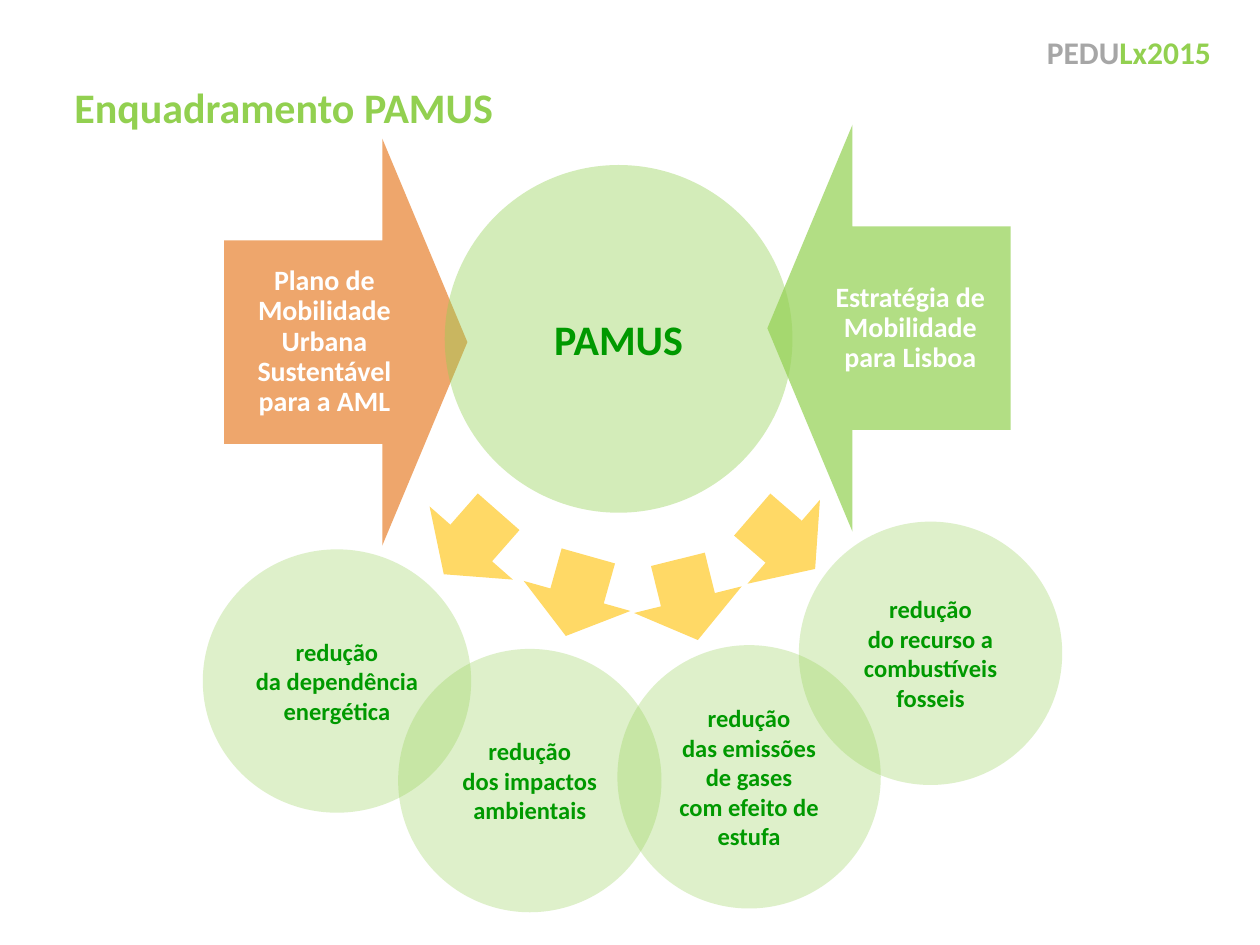
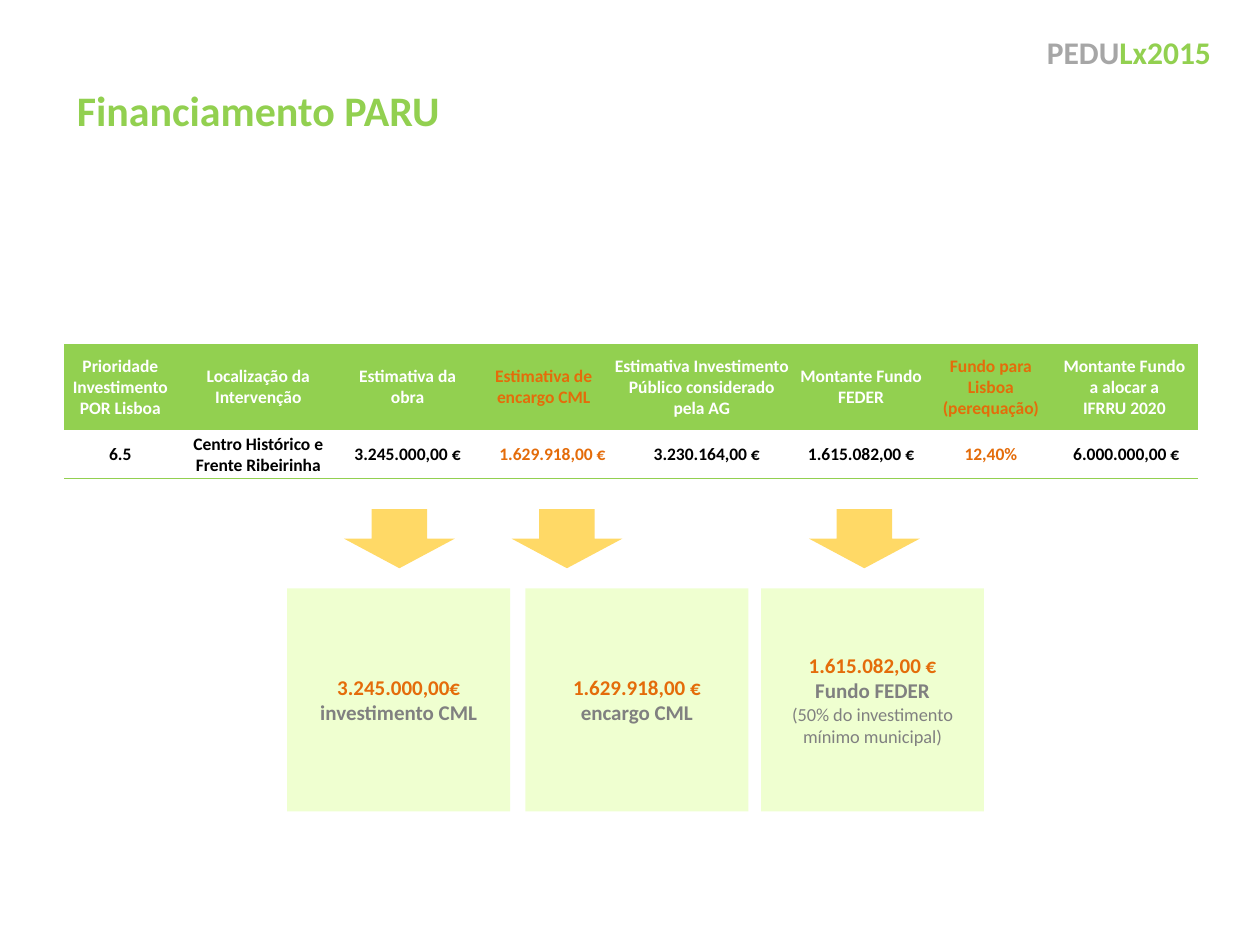
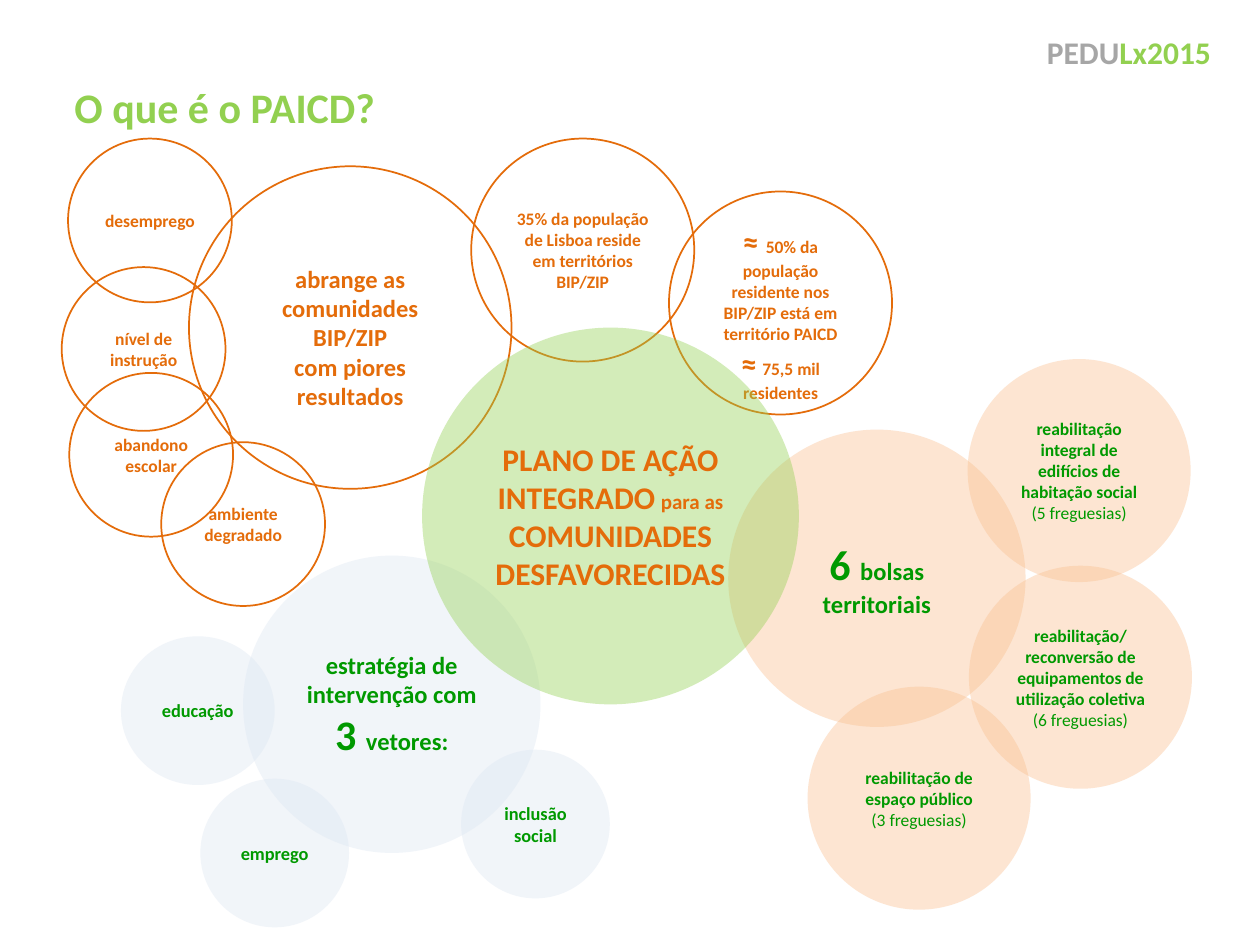
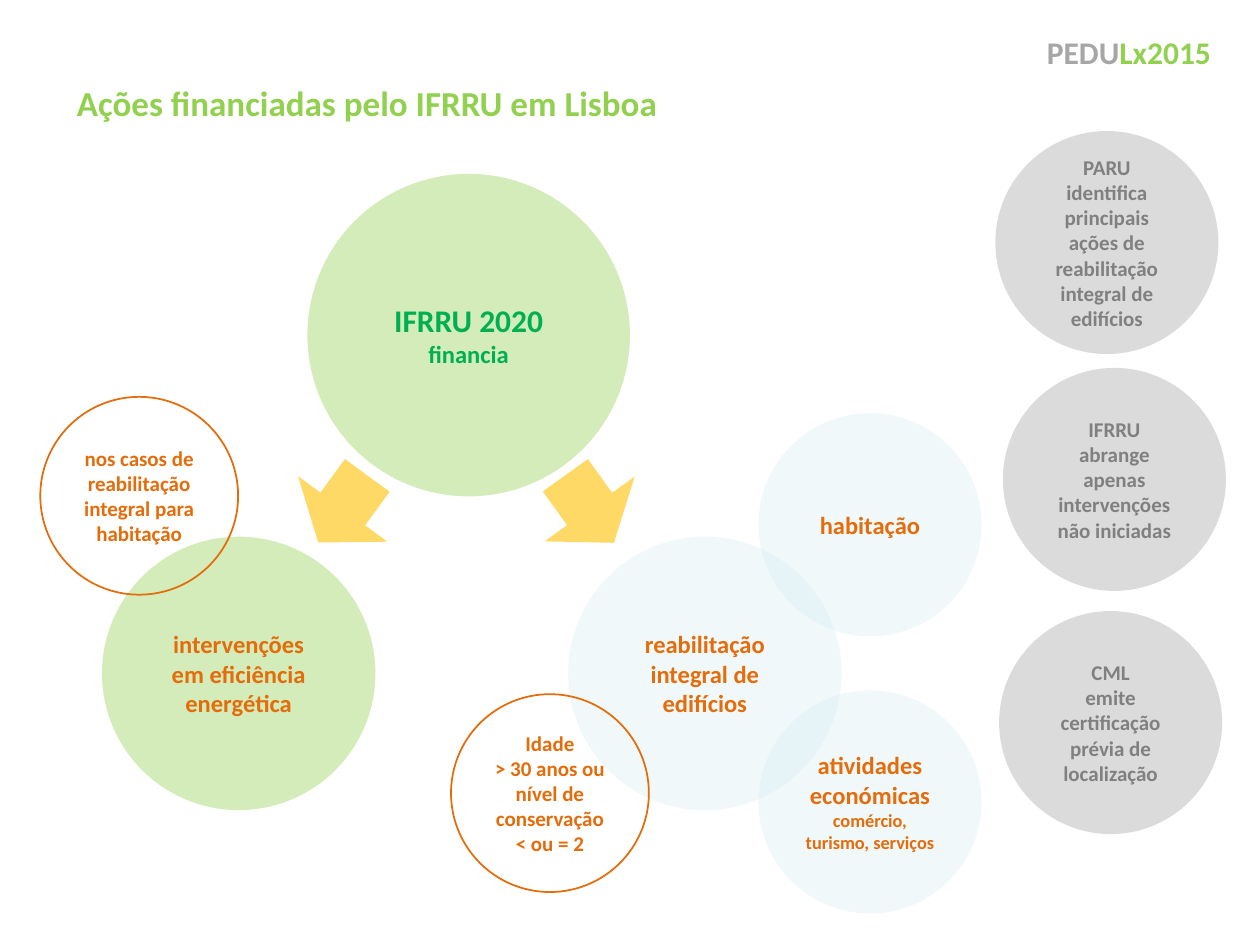
import pptx
import pptx.util
import pptx.dml.color
import pptx.enum.shapes
import pptx.enum.text
import pptx.oxml
import pptx.oxml.ns
from lxml import etree

Inches = pptx.util.Inches
Pt = pptx.util.Pt
KIND = pptx.enum.shapes.MSO_SHAPE
ALIGN = pptx.enum.text.PP_ALIGN
ANCHOR = pptx.enum.text.MSO_ANCHOR
qn = pptx.oxml.ns.qn

FONT = "Calibri"
HUES = {
    "lime": "92D050", "forest": "009900", "jade": "00B050", "orange": "E46C0A",
    "gold": "FFC000", "silver": "A6A6A6", "gray": "808080", "white": "FFFFFF",
    "black": "000000", "mist": "DCE6F2", "ice": "DBEEF4", "peach": "FAC090",
    "lemon": "CCFF66",
}
LOOKS = {
    "leaf": ("lime", 30, "forest"),
    "hub": ("lime", 40, "forest"),
    "plan": ("lime", 40, "orange"),
    "fund": ("lime", 40, "jade"),
    "ring": (None, 0, "orange"),
    "mist": ("mist", 40, "forest"),
    "ice": ("ice", 40, "orange"),
    "peach": ("peach", 40, "forest"),
    "ash": ("silver", 40, "gray"),
    "card": ("lemon", 30, "gray"),
    "sun": ("gold", 60, "white"),
    "clay": ("orange", 60, "white"),
    "lawn": ("lime", 70, "white"),
}
ORANGE = {"ink": "orange"}
PLAIN = {"bold": False}
BIG = {"size": 24}
MID = {"size": 18}
NORM = {"size": 14}
SMALL = {"size": 10.5}

BRAND = [[("PEDU", {"ink": "silver"}), ("Lx2015", {"ink": "lime"})]]

GOALS = [
    (1.61, 4.36, 2.13, "leaf", 14, ["redução", "da dependência energética"]),
    (6.34, 4.14, 2.09, "leaf", 14, ["redução", "do recurso a combustíveis fosseis"]),
    (3.16, 5.15, 2.09, "leaf", 14, ["redução", "dos impactos ambientais"]),
    (4.9, 5.12, 2.09, "leaf", 14,
     ["redução", "das emissões", "de gases", "com efeito de estufa"]),
]
PAMUS = [(3.53, 1.31, 2.76, "hub", 24, ["PAMUS"])]
INPUTS = [
    (1.13, 1.75, 270, "clay", 1.78, "Plano de Mobilidade Urbana Sustentável para a AML"),
    (5.44, 1.64, 90, "lawn", 6.43, "Estratégia de Mobilidade para Lisboa"),
]
FLOWS = [(5.02, 4.43, 346.1), (5.78, 3.97, 310.8), (4.14, 4.4, 15.7), (3.3, 3.98, 41.3)]

COLS = [
    (0.89, "white", "Prioridade Investimento POR Lisboa", "6.5", 0.01),
    (1.3, "white", "Localização da Intervenção", "Centro Histórico e Frente Ribeirinha", 0.01),
    (1.07, "white", "Estimativa da obra", "3.245.000,00 €", 0.01),
    (1.09, "orange", "Estimativa de encargo CML", "1.629.918,00 €", 0.15),
    (1.42, "white", "Estimativa Investimento Público considerado pela AG", "3.230.164,00 €", 0.09),
    (1.11, "white", "Montante Fundo FEDER", "1.615.082,00 €", 0.01),
    (0.95, "orange", "Fundo para Lisboa (perequação)", "12,40%", 0.01),
    (1.17, "white", "Montante Fundo\va alocar a\vIFRRU 2020", "6.000.000,00 €", 0.04),
]
CARDS = [
    (2.28, 2.73, [[("3.245.000,00€", ORANGE)], "investimento CML"]),
    (4.17, 4.06, [[("1.629.918,00 €", ORANGE)], "encargo CML"]),
    (6.04, 6.42, [[("1.615.082,00 €", ORANGE)], "Fundo FEDER",
                  [("(50% do investimento mínimo municipal)", {"size": 10.5, "bold": False})]]),
]

PAICD = [
    (3.66, 5.95, 1.18, "mist", 10.5, ["inclusão social"]),
    (1.59, 6.18, 1.18, "mist", 10.5, ["emprego"]),
    (0.54, 1.1, 1.3, "ring", 10, ["desemprego"]),
    (1.5, 1.32, 2.56, "ring", 14,
     ["abrange as comunidades BIP/ZIP", "com piores resultados"], 0.2),
    (3.74, 1.1, 1.77, "ring", 10,
     ["35% da população de Lisboa reside em territórios BIP/ZIP"]),
    (5.31, 1.52, 1.77, "ring", 10,
     [[("≈ ", MID), "50% da população residente nos BIP/ZIP está em território PAICD"],
      [("≈", MID), (" ", NORM), "75,5 mil residentes"]], 0.2),
    (5.78, 3.41, 2.36, "peach", 14, [[("6 ", BIG), "bolsas territoriais"]]),
    (1.93, 4.41, 2.36, "mist", 14,
     ["estratégia de intervenção com", [("3 ", BIG), "vetores:"]]),
    (7.68, 2.85, 1.77, "peach", 10,
     ["reabilitação integral de edifícios de habitação social", [("(5 freguesias)", PLAIN)]]),
    (6.41, 5.45, 1.77, "peach", 10,
     ["reabilitação de espaço público", [("(3 freguesias)", PLAIN)]]),
    (7.69, 4.49, 1.77, "peach", 10,
     ["reabilitação/ reconversão de equipamentos de utilização coletiva",
      [("(6 freguesias)", PLAIN)]]),
    (3.35, 2.6, 2.99, "plan", 18,
     [["PLANO DE AÇÃO INTEGRADO", (" ", NORM), ("para as", {"size": 12})],
      "COMUNIDADES DESFAVORECIDAS"]),
    (0.96, 5.05, 1.22, "mist", 10.5, ["educação"]),
    (0.49, 2.12, 1.3, "ring", 10, ["nível de instrução"]),
    (0.55, 2.96, 1.3, "ring", 10, ["abandono escolar"]),
    (1.28, 3.51, 1.3, "ring", 10, ["ambiente degradado"]),
]

IFRRU = [
    (2.44, 1.38, 2.56, "fund", 18, [["IFRRU 2020 ", ("financia", NORM)]]),
    (4.51, 4.26, 2.17, "ice", 14, ["reabilitação integral de edifícios"]),
    (0.81, 4.26, 2.17, "plan", 14, ["intervenções em eficiência energética"]),
    (6.02, 3.28, 1.77, "ice", 14, ["habitação"]),
    (3.58, 5.51, 1.57, "ring", 12, ["Idade", "> 30 anos ou nível de conservação < ou = 2"]),
    (6.02, 5.48, 1.77, "ice", 14,
     [["atividades económicas ", ("comércio, turismo, serviços", SMALL)]]),
    (0.32, 3.15, 1.57, "ring", 12, ["nos casos de reabilitação integral para habitação"]),
    (7.9, 1.04, 1.77, "ash", 12,
     ["PARU identifica principais ações de reabilitação integral de edifícios"]),
    (7.96, 2.92, 1.77, "ash", 12, ["IFRRU", "abrange apenas intervenções não iniciadas"]),
    (7.93, 4.85, 1.77, "ash", 12, ["CML", "emite certificação prévia de localização"]),
]
SPLITS = [(2.28, 3.71, 36.2), (4.24, 3.71, 324.3)]


def rgb(hue):
    return pptx.dml.color.RGBColor.from_string(HUES[hue])


def style(font, form):
    for key, val in form.items():
        if key == "ink":
            font.color.rgb = rgb(val)
        else:
            setattr(font, key, Pt(val) if key == "size" else val)


def write(frame, paras, size, ink, align=ALIGN.CENTER, **form):
    base = {"name": FONT, "size": size, "bold": True, "ink": ink}
    for key, val in {"word_wrap": True, **form}.items():
        setattr(frame, key, val)
    for num, para in enumerate(paras):
        line = frame.paragraphs[0] if num == 0 else frame.add_paragraph()
        line.alignment = align
        for part in [para] if isinstance(para, str) else para:
            words, extra = (part, {}) if isinstance(part, str) else part
            for spot, piece in enumerate(words.split("\v")):
                if spot:
                    line.add_line_break()
                run = line.add_run()
                run.text = piece
                style(run.font, {**base, **extra})


def shape(slide, kind, box, look, turn=0):
    fill, alpha, ink = LOOKS[look]
    item = slide.shapes.add_shape(kind, *map(Inches, box))
    item.shadow.inherit = False
    item.rotation = turn
    if fill:
        item.fill.solid()
        item.fill.fore_color.rgb = rgb(fill)
        tint = item._element.spPr.find(".//" + qn("a:srgbClr"))
        etree.SubElement(tint, qn("a:alpha")).set("val", str(alpha * 1000))
        item.line.fill.background()
    else:
        item.fill.background()
        item.line.color.rgb = rgb(ink)
        item.line.width = Pt(1)
    return item


def discs(slide, rows):
    for left, top, size, look, pt, paras, *drop in rows:
        high = {2.13: 2.09, 1.22: 1.18}.get(size, size)
        disc = shape(slide, KIND.OVAL, (left, top, size, high), look)
        write(disc.text_frame, paras, pt, LOOKS[look][2],
              margin_top=Inches(drop[0] if drop else 0.05),
              vertical_anchor=ANCHOR.MIDDLE)


def arrows(slide, rows, high=0.66):
    for left, top, turn in rows:
        shape(slide, KIND.DOWN_ARROW, (left, top, 0.88, high), "sun", turn)


def text(slide, box, paras, size, ink, align, **form):
    item = slide.shapes.add_textbox(*map(Inches, box))
    write(item.text_frame, paras, size, ink, align, **form)
    return item


def start(deck, name, box, size=24):
    slide = deck.slides.add_slide(deck.slide_layouts[5])
    title = slide.shapes.title
    for key, val in zip(("left", "top", "width", "height"), box):
        setattr(title, key, Inches(val))
    write(title.text_frame, [name], size, "lime", ALIGN.LEFT,
          vertical_anchor=ANCHOR.TOP, auto_size=pptx.enum.text.MSO_AUTO_SIZE.NONE)
    text(slide, (7.9, 0.21, 1.81, 0.71), BRAND, 18, "lime", ALIGN.RIGHT)
    return slide


def edge(cell):
    props = cell._tc.get_or_add_tcPr()
    for spot, tag in enumerate(("a:lnT", "a:lnB")):
        line = etree.Element(qn(tag), w=str(Pt(0.5)))
        fill = etree.SubElement(line, qn("a:solidFill"))
        etree.SubElement(fill, qn("a:srgbClr")).set("val", HUES["lime"])
        props.insert(spot, line)


def costs(slide):
    box = map(Inches, (0.51, 2.73, 9, 1.07))
    table = slide.shapes.add_table(2, len(COLS), *box).table
    table.first_row = table.horz_banding = False
    kind = table._tbl.tblPr.find(qn("a:tableStyleId"))
    kind.text = "{2D5ABB26-0587-4C30-8999-92F81FD0307C}"
    for row, high in zip(table.rows, (0.68, 0.39)):
        row.height = Inches(high)
    for col, (wide, ink, head, value, lead) in enumerate(COLS):
        table.columns[col].width = Inches(wide)
        tone = "black" if ink == "white" else ink
        for row, words, hue, left in ((0, head, ink, 0.01), (1, value, tone, lead)):
            cell = table.cell(row, col)
            form = {"margin_left": left, "margin_right": 0.01,
                    "margin_top": 0.01, "margin_bottom": 0}
            for key, val in form.items():
                setattr(cell, key, Inches(val))
            cell.vertical_anchor = ANCHOR.MIDDLE
            write(cell.text_frame, [words], 10, hue)
            if row == 0:
                cell.fill.solid()
                cell.fill.fore_color.rgb = rgb("lime")
            else:
                cell.fill.background()
            edge(cell)


def frame_slide(deck):
    slide = start(deck, "Enquadramento PAMUS", (0.49, 0.6, 8.84, 0.5))
    discs(slide, GOALS)
    for left, top, turn, look, inner, words in INPUTS:
        block = shape(slide, KIND.DOWN_ARROW, (left, top, 3.23, 1.93), look, turn)
        block.adjustments[0] = 0.5
        block.adjustments[1] = 0.35
        pads = {f"margin_{side}": Inches(0.12) for side in ("left", "right", "top", "bottom")}
        label = text(slide, (inner, top + 0.16, 1.59, 1.61), [words], 16, "white",
                     ALIGN.CENTER, vertical_anchor=ANCHOR.MIDDLE, **pads)
        label.text_frame.paragraphs[0].line_spacing = 0.9
    discs(slide, PAMUS)
    arrows(slide, FLOWS)


def paru_slide(deck):
    slide = start(deck, "Financiamento PARU", (0.51, 0.62, 7.17, 0.5))
    costs(slide)
    for left, tip, paras in CARDS:
        card = shape(slide, KIND.RECTANGLE, (left, 4.67, 1.77, 1.77), "card")
        write(card.text_frame, paras, 12, "gray", vertical_anchor=ANCHOR.MIDDLE)
        arrows(slide, [(tip, 4.04, 0)], 0.47)


def paicd_slide(deck):
    slide = start(deck, "O que é o PAICD?", (0.49, 0.6, 8.84, 0.5))
    discs(slide, PAICD)


def ifrru_slide(deck):
    slide = start(deck, "Ações financiadas pelo IFRRU em Lisboa", (0.51, 0.6, 4.98, 0.44), 20)
    discs(slide, IFRRU)
    arrows(slide, SPLITS)


def main():
    deck = pptx.Presentation()
    deck.slide_width = Inches(10)
    deck.slide_height = Inches(7.5)
    for build in (frame_slide, paru_slide, paicd_slide, ifrru_slide):
        build(deck)
    deck.save("out.pptx")


if __name__ == "__main__":
    main()
